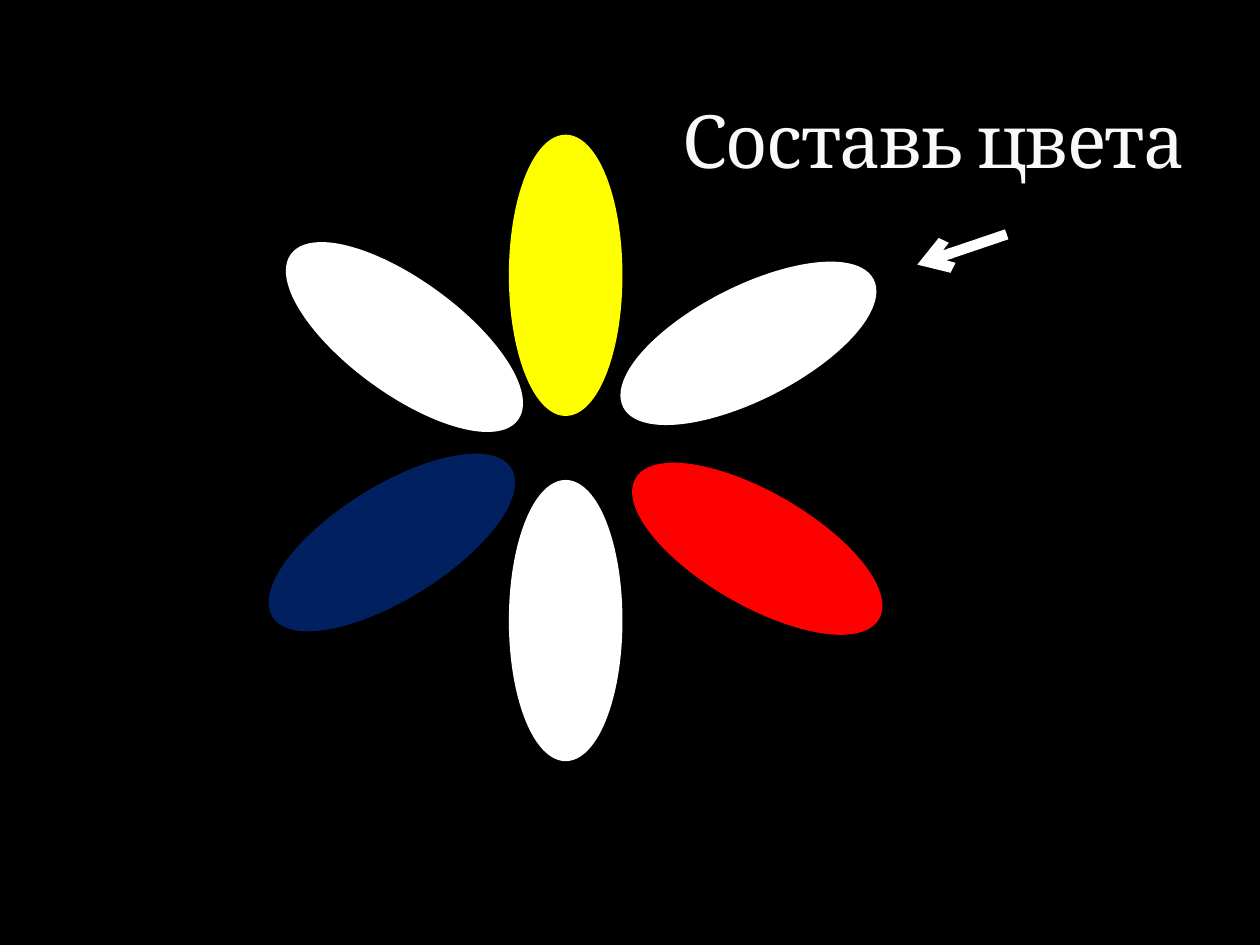
import pptx
import pptx.dml.color
import pptx.enum.shapes
import pptx.enum.text
import pptx.oxml
import pptx.oxml.ns
import pptx.util

Inches = pptx.util.Inches
Pt = pptx.util.Pt
RGBColor = pptx.dml.color.RGBColor

BLACK = RGBColor(0x00, 0x00, 0x00)
WHITE = RGBColor(0xFF, 0xFF, 0xFF)
RED = RGBColor(0xFF, 0x00, 0x00)
YELLOW = RGBColor(0xFF, 0xFF, 0x00)
NAVY = RGBColor(0x00, 0x20, 0x60)
TITLE_COLOR = RGBColor(0xF9, 0xF9, 0xF9)
TITLE_OUTLINE = RGBColor(0x3C, 0x44, 0x22)

PETAL_WIDTH, PETAL_HEIGHT = 0.86, 2.19
PETALS = [
    (5.58, 3.26, 300, RED),
    (4.06, 1.09, 0, YELLOW),
    (2.68, 3.21, 238.1, NAVY),
    (2.78, 1.58, 306.1, WHITE),
    (4.06, 3.83, 0, WHITE),
    (5.51, 1.63, 63, WHITE),
]


class FlowerSlide:
    """Holds the style and the current slide, and draws its elements."""

    font = "Cambria"

    def __init__(self, prs):
        self.s = prs.slides.add_slide(prs.slide_layouts[6])
        fill = self.s.background.fill
        fill.solid()
        fill.fore_color.rgb = BLACK

    def element(self, xml):
        return pptx.oxml.parse_xml(xml.replace(">", f" {pptx.oxml.ns.nsdecls('a')}>", 1))

    def petal(self, x, y, angle, color):
        sp = self.s.shapes.add_shape(
            pptx.enum.shapes.MSO_SHAPE.OVAL,
            Inches(x), Inches(y), Inches(PETAL_WIDTH), Inches(PETAL_HEIGHT))
        sp.rotation = angle
        sp.shadow.inherit = False
        sp.fill.solid()
        sp.fill.fore_color.rgb = color
        sp.line.color.rgb = color
        sp.line.width = Pt(3)

    def title(self, text, x, y, width, height):
        sp = self.s.shapes.add_textbox(Inches(x), Inches(y), Inches(width), Inches(height))
        tf = sp.text_frame
        tf.word_wrap = True
        tf.vertical_anchor = pptx.enum.text.MSO_ANCHOR.BOTTOM
        p = tf.paragraphs[0]
        p.alignment = pptx.enum.text.PP_ALIGN.RIGHT
        r = p.add_run()
        r.text = text
        r.font.name = self.font
        r.font.size = Pt(42)
        r.font.color.rgb = TITLE_COLOR
        props = r.font._element
        props.set("spc", "-100")
        props.insert(0, self.element(
            f'<a:ln w="{Pt(0.25)}"><a:solidFill><a:srgbClr val="{TITLE_OUTLINE}">'
            '<a:alpha val="25000"/></a:srgbClr></a:solidFill></a:ln>'))

    def arrow(self, x1, y1, x2, y2):
        line = self.s.shapes.add_connector(
            pptx.enum.shapes.MSO_CONNECTOR.STRAIGHT,
            Inches(x1), Inches(y1), Inches(x2), Inches(y2))
        line.line.color.rgb = WHITE
        line.line.width = Pt(6)
        line.line._get_or_add_ln().append(self.element('<a:tailEnd type="arrow"></a:tailEnd>'))
        line._element.spPr.append(self.element("<a:effectLst></a:effectLst>"))


def main():
    prs = pptx.Presentation()
    prs.slide_width, prs.slide_height = Inches(10), Inches(7.5)
    slide = FlowerSlide(prs)
    for petal in PETALS:
        slide.petal(*petal)
    slide.title("Составь цвета", 0.5, 0.17, 9, 1.33)
    slide.arrow(7.99, 1.86, 7.28, 2.1)
    prs.save("out.pptx")


if __name__ == "__main__":
    main()
